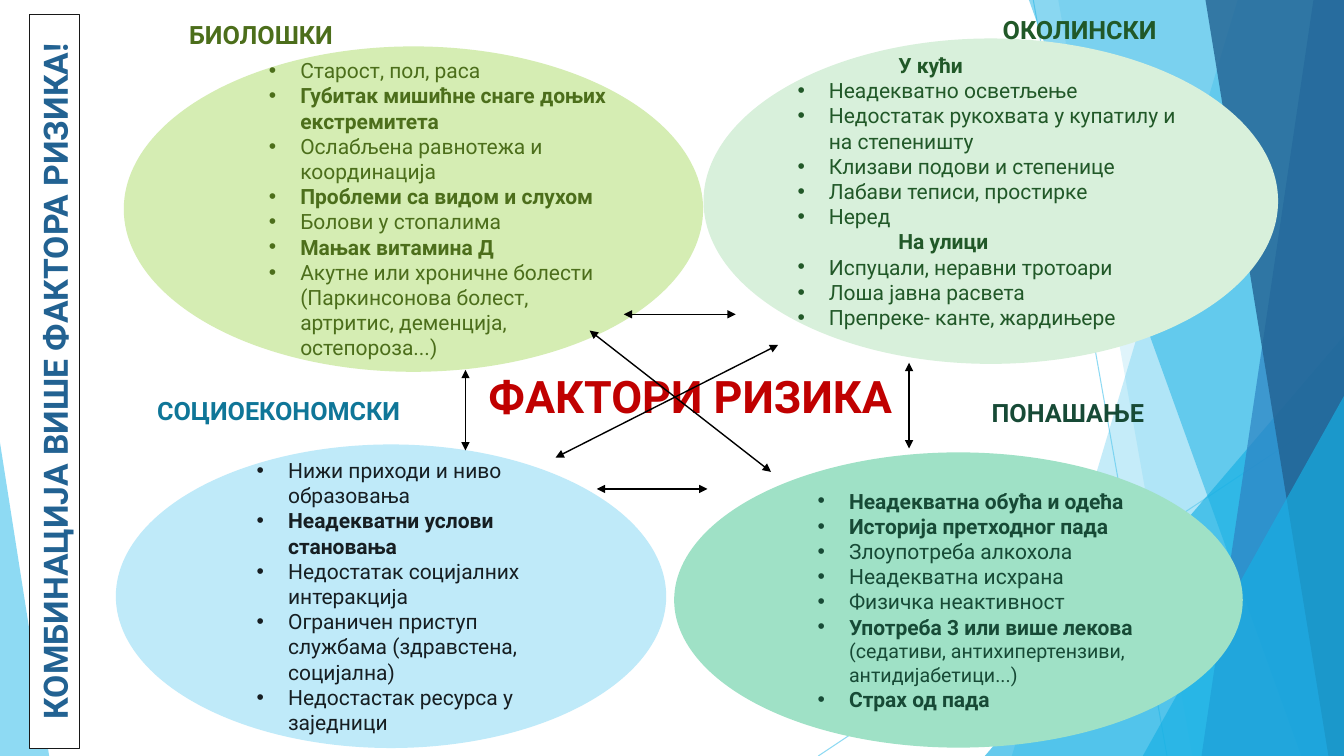
"""Build the slide on combined risk factors for falls."""
from dataclasses import dataclass

from lxml.etree import SubElement
from pptx import Presentation
from pptx.dml.color import RGBColor
from pptx.enum.shapes import MSO_CONNECTOR, MSO_SHAPE
from pptx.enum.text import MSO_ANCHOR, PP_ALIGN
from pptx.oxml.ns import qn
from pptx.util import Cm, Pt

FONT = "Roboto"
WIDTH, HEIGHT = 33.87, 19.05
WHITE = RGBColor(0xFF, 0xFF, 0xFF)
BLACK = RGBColor(0x00, 0x00, 0x00)
CHARCOAL = RGBColor(0x18, 0x18, 0x18)
RED = RGBColor(0xC0, 0x00, 0x00)
SKY = RGBColor(0x5F, 0xCB, 0xEF)
CYAN = RGBColor(0x17, 0xB0, 0xE4)
BLUE = RGBColor(0x2E, 0x83, 0xC3)
NAVY = RGBColor(0x22, 0x62, 0x92)
LIME = RGBColor(0xD5, 0xED, 0xB3)
OLIVE = RGBColor(0x4C, 0x6E, 0x1B)
MINT = RGBColor(0xD8, 0xF0, 0xDB)
FOREST = RGBColor(0x21, 0x58, 0x28)
ICE = RGBColor(0xBF, 0xEA, 0xF9)
INK = RGBColor(0x16, 0x1E, 0x22)
TEAL = RGBColor(0x0F, 0x76, 0x98)
JADE = RGBColor(0x9F, 0xE1, 0xC6)
PINE = RGBColor(0x17, 0x4A, 0x36)


@dataclass(frozen=True)
class Facet:
    """Full-height panel from a slanted left edge to the right slide edge."""
    top: float
    bottom: float
    color: RGBColor
    opacity: int


@dataclass(frozen=True)
class Corner:
    """Right triangle standing on the bottom slide edge."""
    left: float
    top: float
    width: float
    apex: float
    color: RGBColor
    opacity: int


@dataclass(frozen=True)
class Label:
    text: str
    left: float
    top: float
    width: float
    color: RGBColor
    size: int = 18
    height: float = 1.02


@dataclass(frozen=True)
class Item:
    text: str
    bold: bool = False
    detail: str = ""
    heading: bool = False


@dataclass(frozen=True)
class Factor:
    left: float
    top: float
    width: float
    height: float
    fill: RGBColor
    color: RGBColor
    items: tuple
    indent: float = 2.06
    lift: float = 0


BACKDROP = (
    Facet(31.19, 25.5, SKY, 36),
    Facet(26.67, 30.05, SKY, 20),
    Corner(24.82, 8.46, 9.05, 1, CYAN, 66),
    Facet(25.93, 32.79, CYAN, 50),
    Facet(33.1, 30.28, BLUE, 70),
    Facet(30.38, 33.48, NAVY, 80),
    Corner(28.8, 9.98, 5.07, 1, CYAN, 66),
    Corner(0, 11.15, 1.24, 0, SKY, 70),
)
RAYS = ((26.04, 0, 29.41, HEIGHT), (WIDTH, 10.24, 20.62, HEIGHT))
ARROWS = (
    (14.86, 8.33, 19.43, 11.89),
    (14, 11.53, 19.61, 8.69),
    (11.73, 11.35, 11.73, 9.32),
    (15.04, 12.32, 17.83, 12.32),
    (15.72, 7.92, 18.54, 7.92),
    (22.91, 11.3, 22.91, 9.14),
)
TITLE = Label("ФАКТОРИ РИЗИКА", 12.06, 9.17, 11, RED, 32, 1.63)
LABELS = (
    Label("БИОЛОШКИ", 4.52, 0.36, 5.33, OLIVE),
    Label("ОКОЛИНСКИ", 25.02, 0.23, 5.33, FOREST),
    Label("СОЦИОЕКОНОМСКИ", 3.71, 9.83, 7.26, TEAL),
    Label("ПОНАШАЊЕ", 24.74, 9.88, 7.67, PINE),
)
FACTORS = (
    Factor(3.12, 1.17, 14.6, 8.2, LIME, OLIVE, (
        Item("Старост, пол, раса"),
        Item("Губитак мишићне снаге доњих екстремитета", bold=True),
        Item("Ослабљена равнотежа и координација"),
        Item("Проблеми са видом и слухом", bold=True),
        Item("Болови у стопалима"),
        Item("Мањак витамина Д", bold=True),
        Item("Акутне или хроничне болести (Паркинсонова болест, артритис, деменција, остепороза...)"),
    )),
    Factor(17.73, 0.97, 14.48, 8.2, MINT, FOREST, (
        Item("У кући", bold=True, heading=True),
        Item("Неадекватно осветљење"),
        Item("Недостатак рукохвата у купатилу и на степеништу"),
        Item("Клизави подови и степенице"),
        Item("Лабави теписи, простирке"),
        Item("Неред"),
        Item("На улици", bold=True, heading=True),
        Item("Испуцали, неравни тротоари"),
        Item("Лоша јавна расвета"),
        Item("Препреке- канте, жардињере"),
    ), indent=0.79, lift=0.5),
    Factor(2.92, 11.2, 13.87, 7.65, ICE, INK, (
        Item("Нижи приходи и ниво образовања"),
        Item("Неадекватни услови становања", bold=True),
        Item("Недостатак социјалних интеракција"),
        Item("Ограничен приступ службама (здравстена, социјална)"),
        Item("Недостастак ресурса у заједници"),
    )),
    Factor(16.99, 11.4, 14.33, 7.44, JADE, PINE, (
        Item("Неадекватна обућа и одећа", bold=True),
        Item("Историја претходног пада", bold=True),
        Item("Злоупотреба алкохола"),
        Item("Неадекватна исхрана"),
        Item("Физичка неактивност"),
        Item("Употреба 3 или више лекова ", bold=True,
             detail="(седативи, антихипертензиви, антидијабетици...)"),
        Item("Страх од пада", bold=True),
    )),
)


def add_span(para, text: str, *, size: float, color: RGBColor, bold: bool = True) -> None:
    span = para.add_run()
    span.text = text
    span.font.name, span.font.size, span.font.bold = FONT, Pt(size), bold
    span.font.color.rgb = color


def set_opacity(shape, percent: int) -> None:
    for color in shape._element.spPr.iter(qn("a:srgbClr")):
        SubElement(color, qn("a:alpha"), val=str(percent * 1000))


def paint(shape, color: RGBColor) -> None:
    shape.shadow.inherit = False
    shape.fill.solid()
    shape.fill.fore_color.rgb = color
    shape.line.fill.background()


def add_line(page, ends: tuple, color: RGBColor, weight: float):
    line = page.shapes.add_connector(MSO_CONNECTOR.STRAIGHT, *map(Cm, ends))
    line.line.color.rgb = color
    line.line.width = Pt(weight)
    SubElement(line._element.spPr, qn("a:effectLst"))
    return line


def add_arrow(page, ends: tuple) -> None:
    outline = add_line(page, ends, BLACK, 1).line._get_or_add_ln()
    for end in ("a:headEnd", "a:tailEnd"):
        SubElement(outline, qn(end), type="triangle")


def add_backdrop(page, part) -> None:
    if isinstance(part, Facet):
        builder = page.shapes.build_freeform(Cm(part.top), 0)
        builder.add_line_segments([(Cm(WIDTH), 0), (Cm(WIDTH), Cm(HEIGHT)), (Cm(part.bottom), Cm(HEIGHT))])
        shape = builder.convert_to_shape()
    else:
        shape = page.shapes.add_shape(MSO_SHAPE.ISOSCELES_TRIANGLE, Cm(part.left), Cm(part.top),
                                      Cm(part.width), Cm(HEIGHT - part.top))
        shape.adjustments[0] = part.apex
    paint(shape, part.color)
    set_opacity(shape, part.opacity)


def add_label(page, label: Label) -> None:
    box = page.shapes.add_textbox(Cm(label.left), Cm(label.top), Cm(label.width), Cm(label.height))
    box.text_frame.word_wrap = True
    add_span(box.text_frame.paragraphs[0], label.text, size=label.size, color=label.color)


def add_factor(page, factor: Factor) -> None:
    oval = page.shapes.add_shape(MSO_SHAPE.OVAL, Cm(factor.left), Cm(factor.top),
                                 Cm(factor.width), Cm(factor.height))
    paint(oval, factor.fill)
    frame = oval.text_frame
    frame.word_wrap = True
    frame.vertical_anchor = MSO_ANCHOR.MIDDLE
    frame.margin_bottom = Cm(0.13 + factor.lift)
    for index, item in enumerate(factor.items):
        para = frame.add_paragraph() if index else frame.paragraphs[0]
        para.alignment = PP_ALIGN.LEFT
        properties = para._p.get_or_add_pPr()
        properties.set("marL", str(Cm(2.54 if item.heading else factor.indent)))
        properties.set("indent", str(Cm(0 if item.heading else -0.79)))
        if not item.heading:
            SubElement(properties, qn("a:buFont"), typeface="Arial")
            SubElement(properties, qn("a:buChar"), char="•")
        add_span(para, item.text, size=15, color=factor.color, bold=item.bold)
        if item.detail:
            add_span(para, item.detail, size=14, color=factor.color, bold=False)


def add_banner(page) -> None:
    banner = page.shapes.add_shape(MSO_SHAPE.RECTANGLE, Cm(-7.87), Cm(8.97), Cm(18.49), Cm(1.27))
    paint(banner, WHITE)
    banner.rotation = 270
    banner.line.color.rgb = CHARCOAL
    banner.line.width = Pt(0.75)
    banner.text_frame.word_wrap = True
    para = banner.text_frame.paragraphs[0]
    para.alignment = PP_ALIGN.CENTER
    add_span(para, "КОМБИНАЦИЈА ВИШЕ ФАКТОРА РИЗИКА!", size=24, color=NAVY)


def main() -> None:
    deck = Presentation()
    deck.slide_width, deck.slide_height = Cm(WIDTH), Cm(HEIGHT)
    page = deck.slides.add_slide(deck.slide_layouts[6])
    for ray in RAYS:
        set_opacity(add_line(page, ray, SKY, 0.75), 70)
    for part in BACKDROP:
        add_backdrop(page, part)
    add_label(page, TITLE)
    for factor in FACTORS:
        add_factor(page, factor)
    for label in LABELS:
        add_label(page, label)
    for arrow in ARROWS:
        add_arrow(page, arrow)
    add_banner(page)
    deck.save("out.pptx")


if __name__ == "__main__":
    main()
